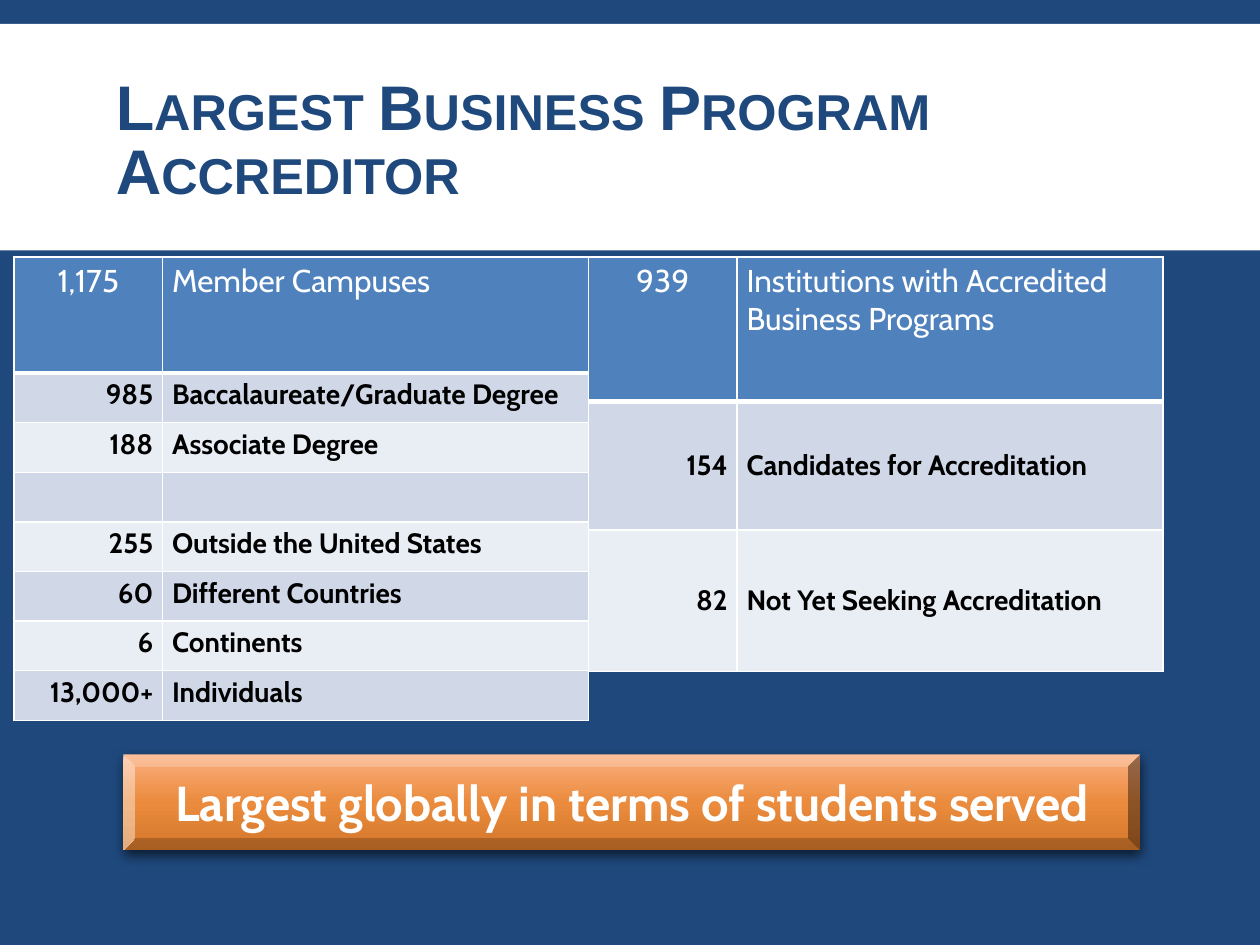
from lxml.etree import SubElement
from copy import deepcopy
from pptx import Presentation
from pptx.dml.color import RGBColor
from pptx.enum.shapes import MSO_SHAPE as Shape
from pptx.enum.text import MSO_ANCHOR as Anchor, PP_ALIGN as Align
from pptx.oxml.ns import qn
from pptx.util import Cm, Pt

NAVY = RGBColor(0x1F, 0x49, 0x7D)
BLUE = RGBColor(0x4F, 0x81, 0xBD)
WHITE = RGBColor(0xFF, 0xFF, 0xFF)
BLACK = RGBColor(0x00, 0x00, 0x00)
BAND_DARK = RGBColor(0xD0, 0xD8, 0xE8)
BAND_LIGHT = RGBColor(0xE9, 0xED, 0xF4)
ORANGES = [RGBColor(0xFC, 0xAF, 0x81), RGBColor(0xEA, 0x8B, 0x3D), RGBColor(0xD4, 0x77, 0x2A)]

MEMBERS = [
    ("1,175", "Member Campuses"),
    ("985", "Baccalaureate/Graduate Degree"),
    ("188", "Associate Degree"),
    ("", ""),
    ("255", "Outside the United States"),
    ("60", "Different Countries"),
    ("6", "Continents"),
    ("13,000+", "Individuals"),
]
INSTITUTIONS = [
    ("939", "Institutions with Accredited Business Programs"),
    ("154", "Candidates for Accreditation"),
    ("82", "Not Yet Seeking Accreditation"),
]


class SlideBuilder:
    """Holds the slide and the style shared by its elements."""

    body_font = "Cabin"
    title_font = "Arial"

    def __init__(self, slide):
        self.slide = slide
        background = slide.background.fill
        background.solid()
        background.fore_color.rgb = NAVY

    def add_text(self, paragraph, text, name, size, color, bold=True, align=Align.LEFT):
        run = paragraph.add_run()
        run.text = text
        paragraph.alignment = align
        font = paragraph.font
        font.name, font.size, font.bold = name, Pt(size), bold
        font.color.rgb = color
        return run

    def band(self, left, top, width, height):
        shape = self.slide.shapes.add_shape(Shape.RECTANGLE, left, top, width, height)
        shape.shadow.inherit = False
        shape.fill.solid()
        shape.fill.fore_color.rgb = WHITE
        shape.line.fill.background()
        # Send the band behind the title
        self.slide.shapes._spTree.insert(2, shape._element)

    def title(self, text, left, top, width, height):
        title = self.slide.shapes.title
        title.left, title.top, title.width, title.height = left, top, width, height
        title.text_frame.vertical_anchor = Anchor.MIDDLE
        paragraph = title.text_frame.paragraphs[0]
        paragraph.line_spacing = 0.85
        run = self.add_text(paragraph, text, self.title_font, 36, NAVY)
        run._r.get_or_add_rPr().set("cap", "small")

    def borders(self, cell, bottom):
        properties = cell._tc.get_or_add_tcPr()
        for index, side in enumerate(("lnL", "lnR", "lnT", "lnB")):
            width = bottom if side == "lnB" else 1
            line = properties.makeelement(qn(f"a:{side}"), {"w": str(Pt(width))})
            fill = SubElement(line, qn("a:solidFill"))
            SubElement(fill, qn("a:srgbClr"), val=str(WHITE))
            properties.insert(index, line)

    def table(self, rows, left, top, widths, heights, body_anchor):
        frame = self.slide.shapes.add_table(len(rows), 2, left, top, sum(widths), sum(heights))
        table = frame.table
        for column, width in zip(table.columns, widths):
            column.width = width
        for row_index, (texts, height) in enumerate(zip(rows, heights)):
            table.rows[row_index].height = height
            header = row_index == 0
            band = BAND_DARK if row_index % 2 else BAND_LIGHT
            for column_index, text in enumerate(texts):
                cell = table.cell(row_index, column_index)
                cell.margin_left = cell.margin_right = Cm(0.19)
                cell.margin_top = cell.margin_bottom = Cm(0.1)
                cell.vertical_anchor = Anchor.TOP if header else body_anchor
                cell.fill.solid()
                cell.fill.fore_color.rgb = BLUE if header else band
                self.borders(cell, bottom=3 if header else 1)
                if not text:
                    continue
                number_align = Align.CENTER if header else Align.RIGHT
                self.add_text(
                    cell.text_frame.paragraphs[0], text, self.body_font,
                    size=18 if header else 16,
                    color=WHITE if header else BLACK,
                    bold=not header,
                    align=Align.LEFT if column_index else number_align,
                )

    def banner(self, text, left, top, width, height):
        shape = self.slide.shapes.add_shape(Shape.BEVEL, left, top, width, height)
        shape.line.fill.background()
        # Three-colour gradient from top to bottom
        shape.fill.gradient()
        shape.fill.gradient_angle = 270
        properties = shape._element.spPr
        stop_list = properties.find(".//" + qn("a:gsLst"))
        stop_list.append(deepcopy(stop_list[0]))
        for index, (stop, color) in enumerate(zip(shape.fill.gradient_stops, ORANGES)):
            stop.position = index / 2
            stop.color.rgb = color
        # Soft shadow below
        shape.shadow.inherit = False
        shadow = SubElement(
            properties.find(qn("a:effectLst")), qn("a:outerShdw"),
            blurRad=str(Pt(7)), dist=str(Pt(2.2)), dir="5400000", rotWithShape="0",
        )
        color = SubElement(shadow, qn("a:srgbClr"), val=str(BLACK))
        SubElement(color, qn("a:alpha"), val="63000")
        frame = shape.text_frame
        frame.word_wrap = True
        frame.vertical_anchor = Anchor.MIDDLE
        self.add_text(frame.paragraphs[0], text, self.body_font, 28, WHITE, align=Align.CENTER)


def main():
    presentation = Presentation()
    presentation.slide_width, presentation.slide_height = Cm(25.4), Cm(19.05)
    builder = SlideBuilder(presentation.slides.add_slide(presentation.slide_layouts[5]))

    # Heading
    builder.band(Cm(0), Cm(0.48), Cm(25.4), Cm(4.57))
    builder.title("Largest Business Program Accreditor", Cm(2.08), Cm(0.79), Cm(22.1), Cm(4.19))

    # Membership and accreditation tables, side by side
    left, top, widths = Cm(0.28), Cm(5.18), [Cm(3), Cm(8.58)]
    builder.table(MEMBERS, left, top, widths, [Cm(2.34)] + [Cm(1)] * 7, Anchor.TOP)
    builder.table(INSTITUTIONS, left + sum(widths), top, widths,
                  [Cm(2.92), Cm(2.58), Cm(2.86)], Anchor.MIDDLE)

    # Closing statement
    builder.banner("Largest globally in terms of students served",
                   Cm(2.49), Cm(15.21), Cm(20.5), Cm(1.93))
    presentation.save("out.pptx")


if __name__ == "__main__":
    main()
